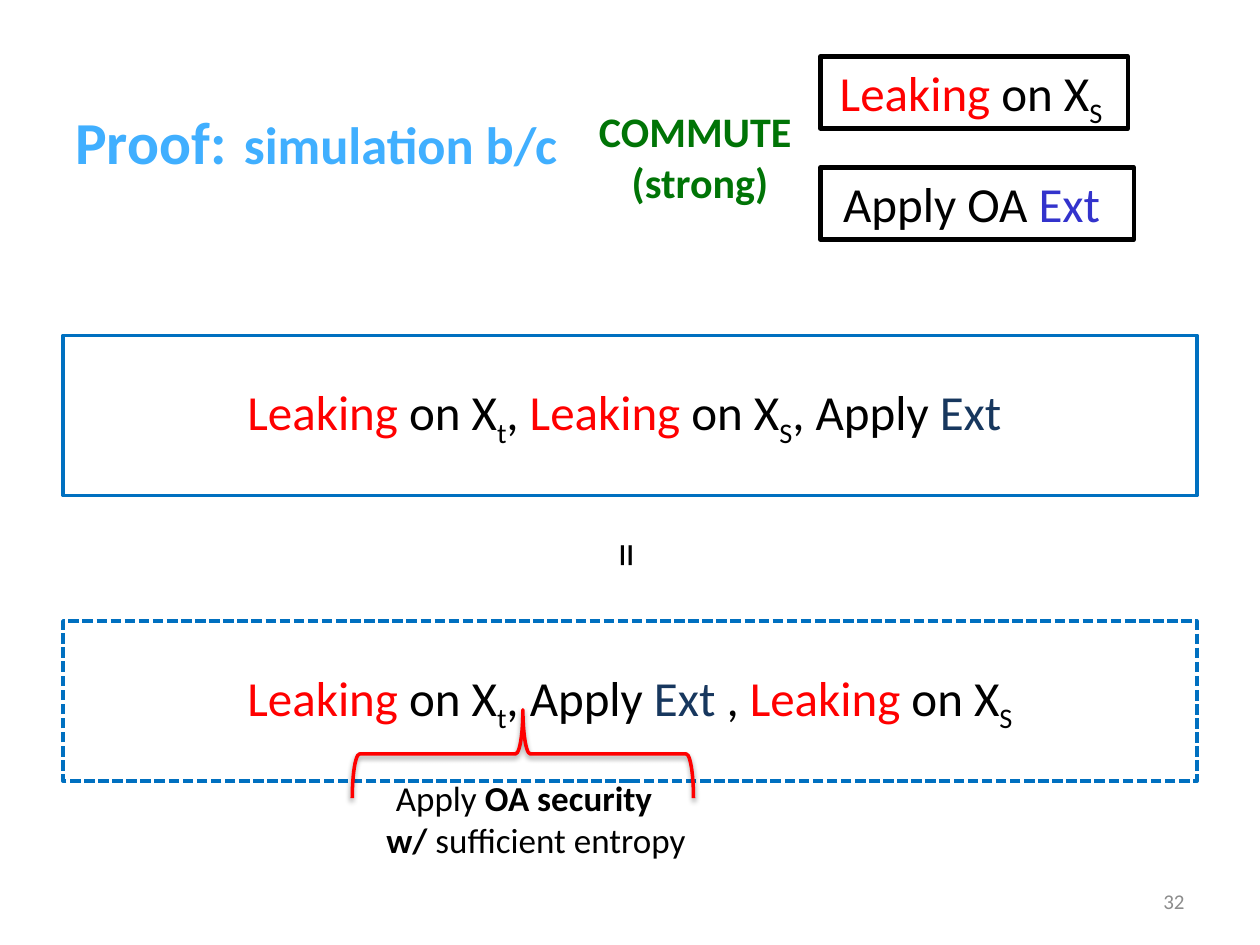
import pptx
import pptx.dml.color
import pptx.enum.dml
import pptx.enum.shapes
import pptx.enum.text
import pptx.oxml
import pptx.oxml.ns
import pptx.util
from pptx.util import Cm

COLOURS = {
    "black": "000000", "white": "FFFFFF", "red": "FF0000", "title": "40AFFF",
    "green": "007406", "violet": "3333CC", "navy": "17375E", "blue": "0070C0",
    "grey": "8C8C8C",
}
ALIGN = pptx.enum.text.PP_ALIGN
ANCHOR = pptx.enum.text.MSO_ANCHOR
SHAPE = pptx.enum.shapes.MSO_SHAPE


def colour(name):
    return pptx.dml.color.RGBColor.from_string(COLOURS[name])


def piece(text, tint="black", size=None, bold=False, sub=False):
    """Describe one run of text; without a size it takes that of its box."""
    return text, tint, size, bold, sub


class ProofSlide:
    font = "Calibri"

    def __init__(self, slide):
        self.slide = slide

    def fill_text(self, frame, paragraphs, size, align, anchor, wrap=True, grow=False):
        frame.word_wrap = wrap
        frame.vertical_anchor = anchor
        if grow:
            frame.auto_size = pptx.enum.text.MSO_AUTO_SIZE.SHAPE_TO_FIT_TEXT
        for index, pieces in enumerate(paragraphs):
            paragraph = frame.add_paragraph() if index else frame.paragraphs[0]
            paragraph.alignment = align
            for text, tint, own_size, bold, sub in pieces:
                run = paragraph.add_run()
                run.text = text
                run.font.name = self.font
                run.font.size = pptx.util.Pt(own_size or size)
                run.font.bold = bold
                run.font.color.rgb = colour(tint)
                if sub:
                    run.font._element.set("baseline", "-25000")

    def label(self, place, paragraphs, size, align=ALIGN.CENTER,
              anchor=ANCHOR.TOP, wrap=False, grow=True, rotation=0):
        box = self.slide.shapes.add_textbox(*map(Cm, place))
        box.rotation = rotation
        self.fill_text(box.text_frame, paragraphs, size, align, anchor, wrap, grow)
        return box

    def outline(self, kind, place, tint, width):
        shape = self.slide.shapes.add_shape(kind, *map(Cm, place))
        shape.shadow.inherit = False
        shape.fill.background()
        shape.line.color.rgb = colour(tint)
        shape.line.width = pptx.util.Pt(width)
        return shape

    def operation(self, place, pieces):
        """Add a small black frame that names one operation."""
        frame = self.outline(SHAPE.RECTANGLE, place, "black", 2.5)
        self.fill_text(frame.text_frame, [pieces], 28, ALIGN.CENTER, ANCHOR.TOP,
                       grow=True)

    def experiment(self, top, pieces, dashed=False):
        """Add a wide blue frame that lists a sequence of operations."""
        frame = self.outline(SHAPE.RECTANGLE, (1.27, top, 22.86, 3.23), "blue", 2)
        frame.fill.solid()
        frame.fill.fore_color.rgb = colour("white")
        if dashed:
            frame.line.dash_style = pptx.enum.dml.MSO_LINE.SQUARE_DOT
        self.fill_text(frame.text_frame, [pieces], 28, ALIGN.CENTER, ANCHOR.MIDDLE)

    def brace(self, place, tint):
        """Add a brace that points up, with a soft shadow below."""
        brace = self.outline(SHAPE.RIGHT_BRACE, place, tint, 2)
        brace.rotation = 270
        properties = brace._element.spPr
        properties.find(pptx.oxml.ns.qn("a:xfrm")).set("flipV", "1")
        effects = properties.find(pptx.oxml.ns.qn("a:effectLst"))
        effects.append(pptx.oxml.parse_xml(
            f'<a:outerShdw {pptx.oxml.ns.nsdecls("a")} blurRad="40000" dist="20000" '
            'dir="5400000" rotWithShape="0"><a:srgbClr val="000000">'
            '<a:alpha val="38000"/></a:srgbClr></a:outerShdw>'))


def leaking(index):
    return [piece("Leaking", "red"), piece(" on X"), piece(index, sub=True)]


def main():
    deck = pptx.Presentation()
    deck.slide_width, deck.slide_height = Cm(25.4), Cm(19.05)
    proof = ProofSlide(deck.slides.add_slide(deck.slide_layouts[6]))

    proof.label((1.27, 1.45, 22.86, 2.51),
                [[piece("Proof:", "title", 34, True), piece(" ", "title", 44, True),
                  piece("simulation b/c", "title", 30, True)]],
                34, ALIGN.LEFT, ANCHOR.MIDDLE, wrap=True, grow=False)
    proof.label((18.21, 17.65, 5.92, 1.02), [[piece("32", "grey")]], 12,
                ALIGN.RIGHT, ANCHOR.MIDDLE, wrap=True, grow=False)

    proof.operation((16.54, 3.38, 6.32, 1.45),
                    [piece("Apply OA"), piece(" Ext ", "violet")])
    proof.operation((16.54, 1.14, 6.2, 1.45),
                    [piece("Leaking ", "red"), piece("on X"), piece("S ", sub=True)])
    proof.label((11.79, 2.01, 4.45, 2.31),
                [[piece("COMMUTE", "green", bold=True)],
                 [piece(" (strong)", "green", bold=True)]], 24)

    extract = piece("Ext ", "navy")
    proof.experiment(6.76, [*leaking("t"), piece(", "), *leaking("S"),
                            piece(", Apply "), extract])
    proof.experiment(12.52, [*leaking("t"), piece(", Apply "), extract,
                             piece(", "), *leaking("S")], dashed=True)
    proof.label((12.19, 10.49, 1.02, 1.45), [[piece("=")]], 28, ALIGN.LEFT, rotation=90)

    security = proof.label(
        (7.01, 15.52, 7.11, 1.96),
        [[piece("Apply "), piece("OA security", bold=True)],
         [piece("w/ ", bold=True), piece("sufficient entropy")]], 20)
    entropy_line = security.text_frame.paragraphs[1]
    entropy_line._p.get_or_add_pPr().set("marL", str(Cm(0.48)))
    proof.brace((9.65, 11.76, 1.78, 6.88), "red")

    deck.save("out.pptx")


if __name__ == "__main__":
    main()
